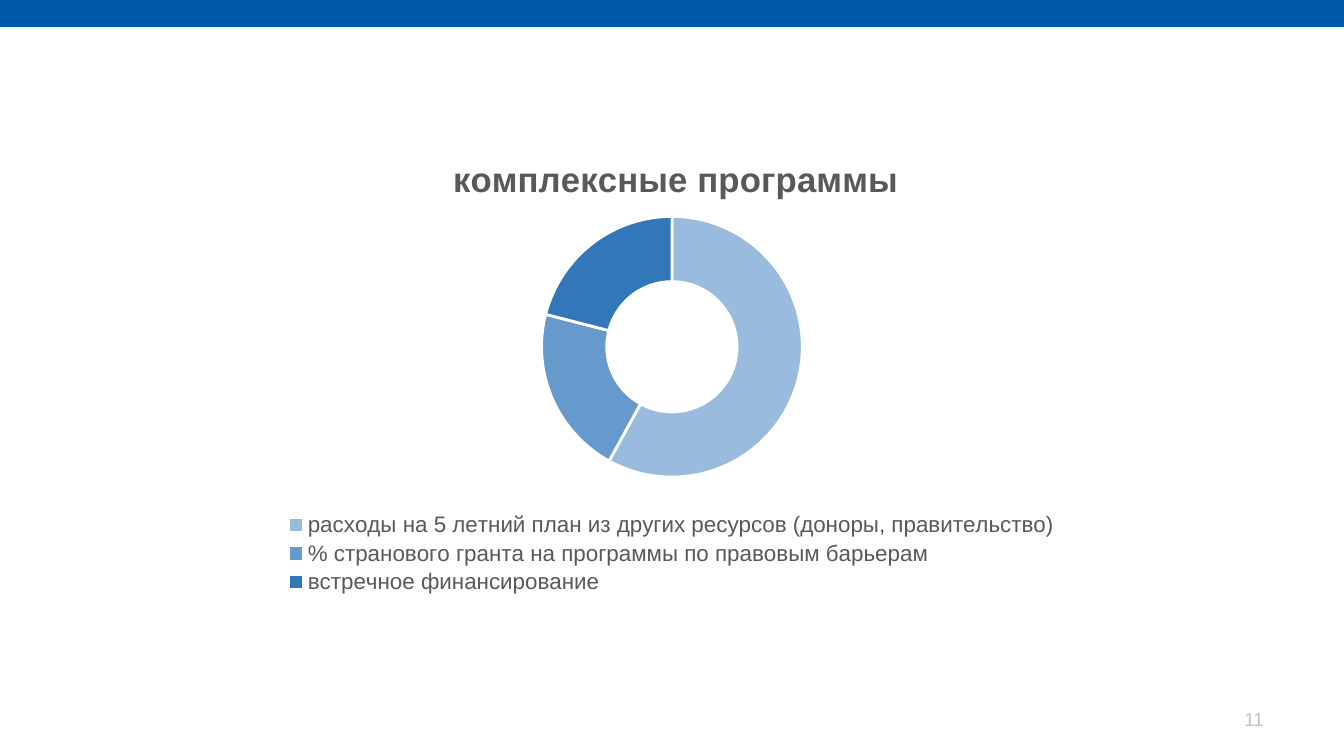
"""Build a slide with a doughnut chart of programme funding."""
import pptx
import pptx.chart.data
import pptx.dml.color
import pptx.enum.chart
import pptx.enum.text
import pptx.oxml
import pptx.oxml.ns
import pptx.util

Pt = pptx.util.Pt
qn = pptx.oxml.ns.qn


def color(code):
    return pptx.dml.color.RGBColor.from_string(code)


def place(node, index, **box):
    for old in node.findall(qn("c:layout")):
        node.remove(old)
    modes = "".join(f'<c:{k}Mode val="edge"/>' for k in "xy")
    sizes = "".join(f'<c:{k} val="{v}"/>' for k, v in box.items())
    inner = '<c:layoutTarget val="inner"/>' if node.tag == qn("c:plotArea") else ""
    node.insert(index, pptx.oxml.parse_xml(
        f'<c:layout {pptx.oxml.ns.nsdecls("c")}><c:manualLayout>'
        f"{inner}{modes}{sizes}</c:manualLayout></c:layout>"))


deck = pptx.Presentation()
deck.slide_width, deck.slide_height = Pt(720), Pt(405)
slide = deck.slides.add_slide(deck.slide_layouts[6])
shapes = slide.shapes

bar = shapes.add_shape(1, 0, 0, Pt(721.5), Pt(14.4))
bar.shadow.inherit = False
bar.fill.solid()
bar.fill.fore_color.rgb = color("005AAA")
bar.line.fill.background()

page = shapes.add_textbox(Pt(516), Pt(374.4), Pt(168), Pt(21.6)).text_frame
page.word_wrap = True
page.vertical_anchor = pptx.enum.text.MSO_ANCHOR.MIDDLE
line = page.paragraphs[0]
line.text = "11"
line.alignment = pptx.enum.text.PP_ALIGN.RIGHT
line.font.name, line.font.size = "Arial", Pt(10)
line.font.color.rgb = color("BFBFBF")

parts = [
    ("расходы на 5 летний план из других ресурсов (доноры, правительство)", 58, "99BBDD"),
    ("% странового гранта на программы по правовым барьерам", 21, "6699CC"),
    ("встречное финансирование", 21, "3377BB"),
]
data = pptx.chart.data.CategoryChartData()
data.categories = [name for name, _, _ in parts]
data.add_series("Series 1", [value for _, value, _ in parts])
chart = shapes.add_chart(pptx.enum.chart.XL_CHART_TYPE.DOUGHNUT,
                         Pt(42.5), Pt(67), Pt(635), Pt(267), data).chart
chart.font.name, chart.font.size = "Arial", Pt(10)
chart.font.color.rgb = color("000000")

plot = chart.plots[0]
plot.vary_by_categories = True
for i, (_, _, code) in enumerate(parts):
    form = plot.series[0].points[i].format
    form.fill.solid()
    form.fill.fore_color.rgb = color(code)
    form.line.color.rgb = color("FFFFFF")
    form.line.width = Pt(1.5)
chart.element.find(".//" + qn("c:holeSize")).set("val", "75")

chart.has_title = True
title = chart.chart_title.text_frame.paragraphs[0]
title.text = "комплексные программы"
title.font.name, title.font.size, title.font.bold = "Arial", Pt(18.6), True
title.font.color.rgb = color("595959")
chart.chart_title.include_in_layout = False

chart.has_legend = True
legend = chart.legend
legend.position = pptx.enum.chart.XL_LEGEND_POSITION.BOTTOM
legend.include_in_layout = False
legend.font.name, legend.font.size = "Arial", Pt(12)
legend.font.color.rgb = color("595959")

root = chart.element
place(root.find(".//" + qn("c:title")), 1, x=0.31, y=0.05)
place(root.find(".//" + qn("c:plotArea")), 0, x=0.39, y=0.18, w=0.22, h=0.53)
place(root.find(".//" + qn("c:legend")), 1, x=0.17, y=0.77, w=0.66, h=0.18)

deck.save("out.pptx")
